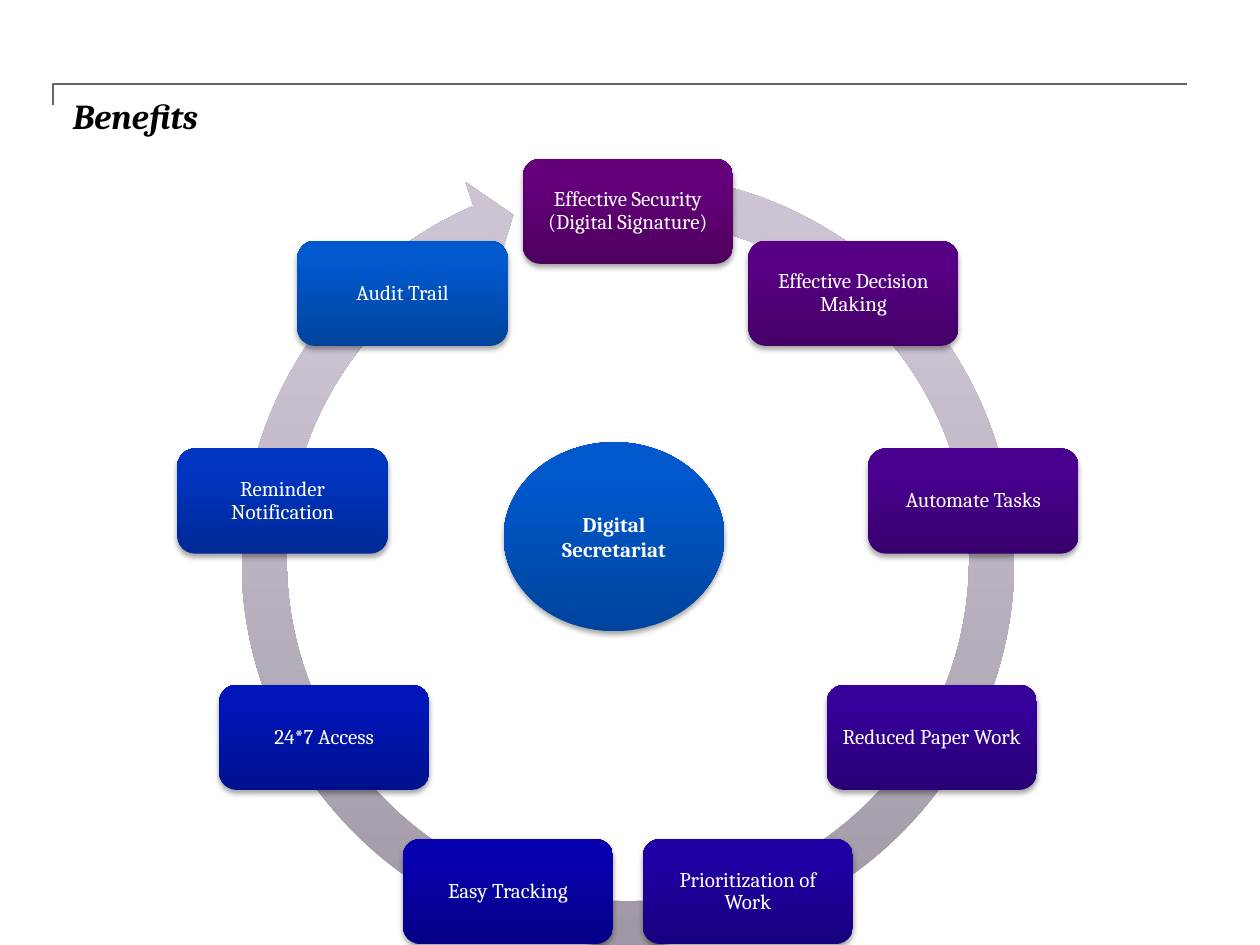
from dataclasses import dataclass
from math import cos, radians, sin

from lxml.etree import SubElement
from pptx import Presentation
from pptx.dml.color import RGBColor as Rgb
from pptx.enum.shapes import MSO_SHAPE as Kind
from pptx.enum.text import MSO_ANCHOR as Anchor, PP_ALIGN as Align
from pptx.oxml.ns import qn
from pptx.shapes.autoshape import Shape
from pptx.util import Cm, Pt


@dataclass(frozen=True)
class Theme:
    face: str = "Cambria"
    ink: str = "000000"
    rule: str = "666666"
    pale: str = "FFFFFF"
    ring: str = "CDC4D3"
    hub: str = "0058CC"
    head: int = 20
    body: int = 12
    shade: float = 0.771


@dataclass(frozen=True)
class Box:
    """A shape with its centre and size in centimetres."""
    kind: Kind
    x: float
    y: float
    wide: float
    high: float
    tint: str


@dataclass(frozen=True)
class Step:
    text: str
    tint: str


THEME = Theme()
HUB_X, HUB_Y, RADIUS = 12.66, 11.33, 7.07
STEPS = [
    Step("Effective Security (Digital Signature)", "65007B"),
    Step("Effective Decision Making", "580085"),
    Step("Automate Tasks", "49008F"),
    Step("Reduced Paper Work", "36009A"),
    Step("Prioritization of Work", "2000A4"),
    Step("Easy Tracking", "0700AE"),
    Step("24*7 Access", "0016B8"),
    Step("Reminder Notification", "0035C2"),
    Step("Audit Trail", "0058CC"),
]


def apply(item, form: dict) -> None:
    for name, value in form.items():
        setattr(item, name, value)


def write(shape, text: str, tint: str, font: dict, para: dict, frame: dict) -> None:
    area = shape.text_frame
    area.text = text
    apply(area, {"word_wrap": True, **frame})
    line = area.paragraphs[0]
    apply(line, para)
    pen = line.runs[0].font
    apply(pen, {"name": THEME.face, **font})
    pen.color.rgb = Rgb.from_string(tint)


def shade(shape: Shape, tint: str) -> None:
    """Fill from a darker foot up to the full tint at four fifths."""
    light = Rgb.from_string(tint)
    dark = Rgb(*(round(part * THEME.shade) for part in light))
    shape.fill.gradient()
    shape.fill.gradient_angle = 90
    for stop, spot, hue in zip(shape.fill.gradient_stops, (0, 0.8), (dark, light)):
        stop.position = spot
        stop.color.rgb = hue


def cast(shape: Shape) -> None:
    """Add a soft shadow straight below the shape."""
    glow = shape._element.spPr.find(qn("a:effectLst"))
    drop = SubElement(glow, qn("a:outerShdw"), blurRad=str(Pt(3.1)),
                      dist=str(Pt(1.8)), dir="5400000", rotWithShape="0")
    hue = SubElement(drop, qn("a:srgbClr"), val=THEME.ink)
    SubElement(hue, qn("a:alpha"), val="35000")


def draw(slide, box: Box) -> Shape:
    shape = slide.shapes.add_shape(
        box.kind, Cm(box.x - box.wide / 2), Cm(box.y - box.high / 2),
        Cm(box.wide), Cm(box.high))
    shape.shadow.inherit = False
    shape.line.fill.background()
    shade(shape, box.tint)
    return shape


def draw_rule(slide) -> None:
    path = slide.shapes.build_freeform(Cm(1.07), Cm(2.11))
    path.add_line_segments([(Cm(1.07), Cm(1.7)), (Cm(23.93), Cm(1.7))], close=False)
    rule = path.convert_to_shape()
    rule.shadow.inherit = False
    rule.fill.background()
    rule.line.color.rgb = Rgb.from_string(THEME.rule)
    rule.line.width = Pt(1)


def draw_title(slide) -> None:
    title = slide.shapes.title
    apply(title, {"left": Cm(1.47), "top": Cm(1.9),
                  "width": Cm(22.43), "height": Cm(2.54)})
    edges = ("left", "top", "right", "bottom")
    write(title, "Benefits", THEME.ink,
          {"size": Pt(THEME.head), "bold": True, "italic": True},
          {"alignment": Align.LEFT},
          {"vertical_anchor": Anchor.TOP, **{f"margin_{edge}": 0 for edge in edges}})


def draw_ring(slide) -> None:
    ring = draw(slide, Box(Kind.CIRCULAR_ARROW, HUB_X, 11.29, 16.59, 16.59, THEME.ring))
    for spot, value in enumerate((0.055, 3.307, 147.665, 168.08, 0.058)):
        ring.adjustments[spot] = value


def draw_steps(slide) -> None:
    edges = ("left", "top", "right", "bottom")
    frame = {"vertical_anchor": Anchor.MIDDLE,
             **{f"margin_{edge}": Cm(0.13) for edge in edges}}
    for spot, step in enumerate(STEPS):
        turn = radians(360 / len(STEPS) * spot)
        card = draw(slide, Box(Kind.ROUNDED_RECTANGLE, HUB_X + RADIUS * sin(turn),
                               HUB_Y - RADIUS * cos(turn), 4.24, 2.12, step.tint))
        cast(card)
        write(card, step.text, THEME.pale, {"size": Pt(THEME.body)},
              {"alignment": Align.CENTER, "line_spacing": 0.9}, frame)


def draw_hub(slide) -> None:
    hub = draw(slide, Box(Kind.OVAL, 12.38, 10.82, 4.45, 3.81, THEME.hub))
    cast(hub)
    write(hub, "Digital Secretariat", THEME.pale,
          {"size": Pt(THEME.body), "bold": True},
          {"alignment": Align.CENTER}, {"vertical_anchor": Anchor.MIDDLE})


def main() -> None:
    deck = Presentation()
    apply(deck, {"slide_width": Cm(25.4), "slide_height": Cm(19.05)})
    slide = deck.slides.add_slide(deck.slide_layouts.get_by_name("Title Only"))
    for part in (draw_rule, draw_title, draw_ring, draw_steps, draw_hub):
        part(slide)
    deck.save("out.pptx")


if __name__ == "__main__":
    main()
